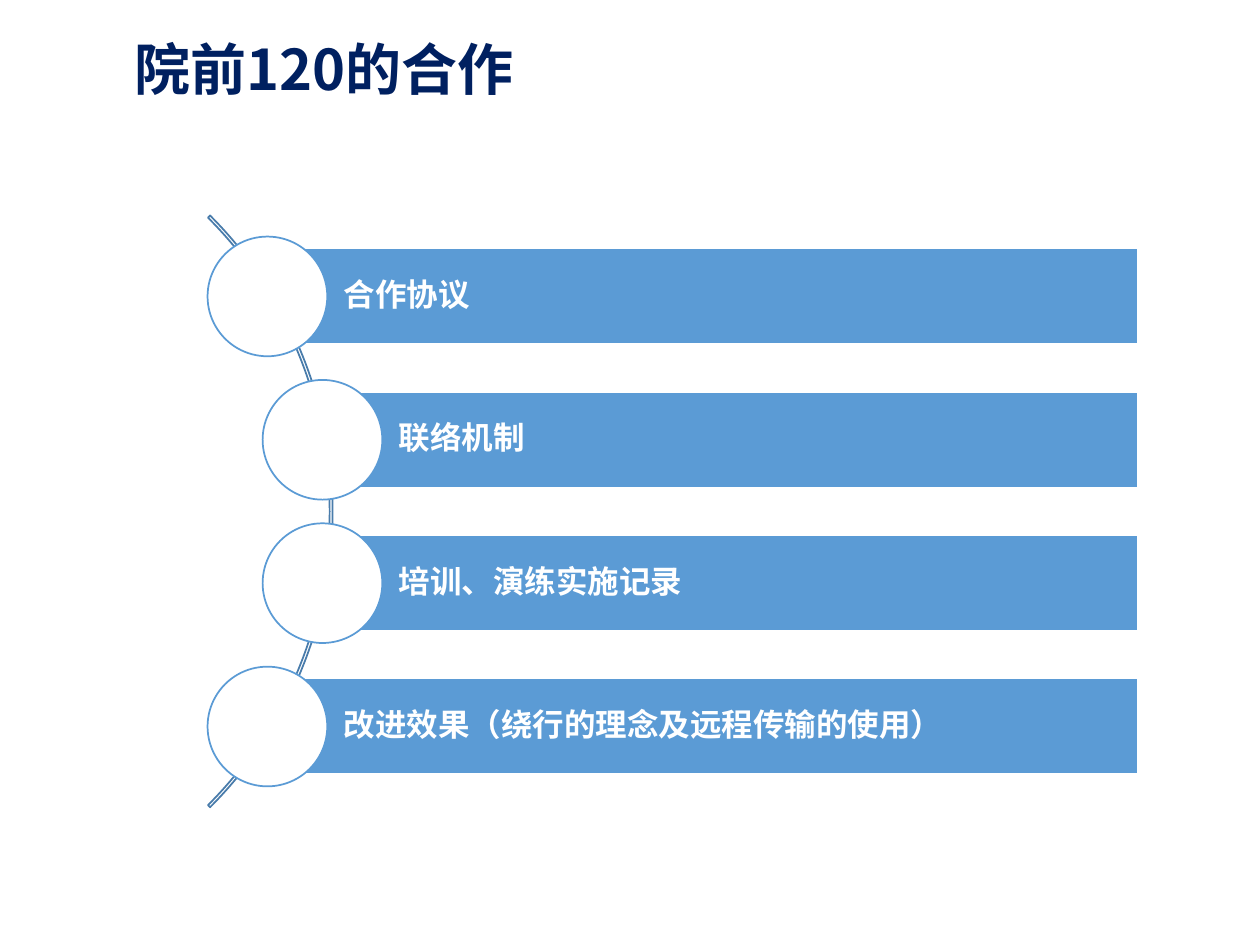
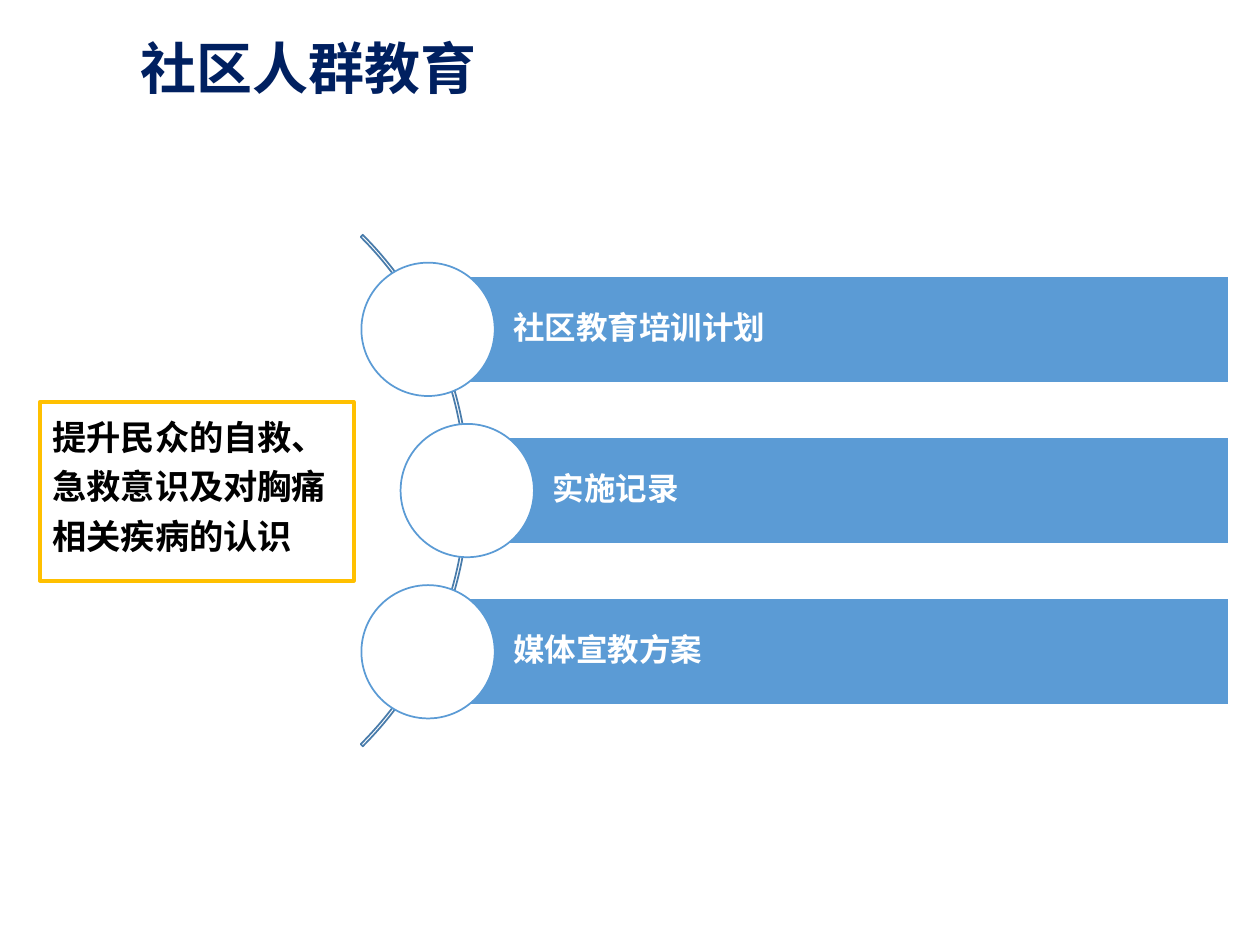
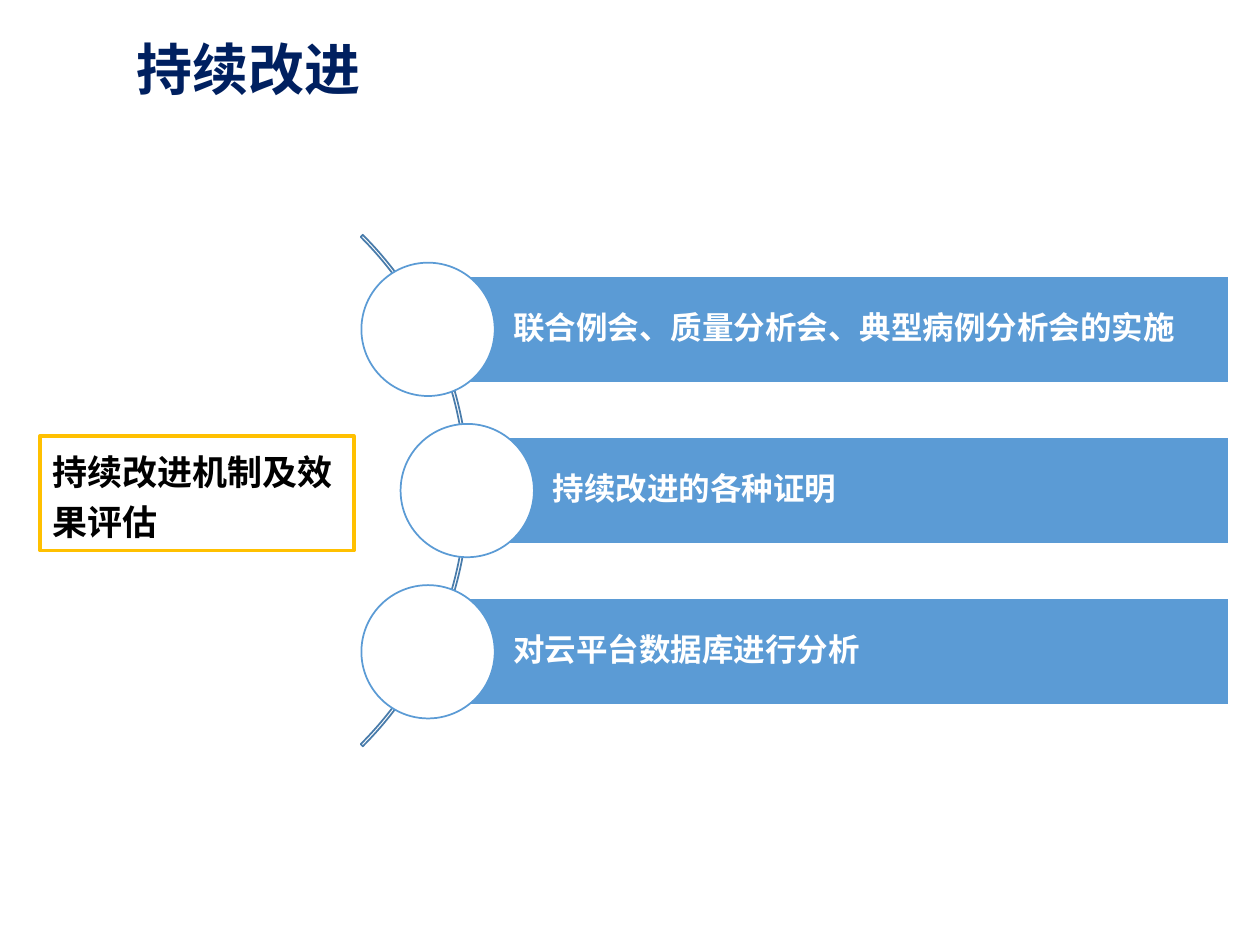
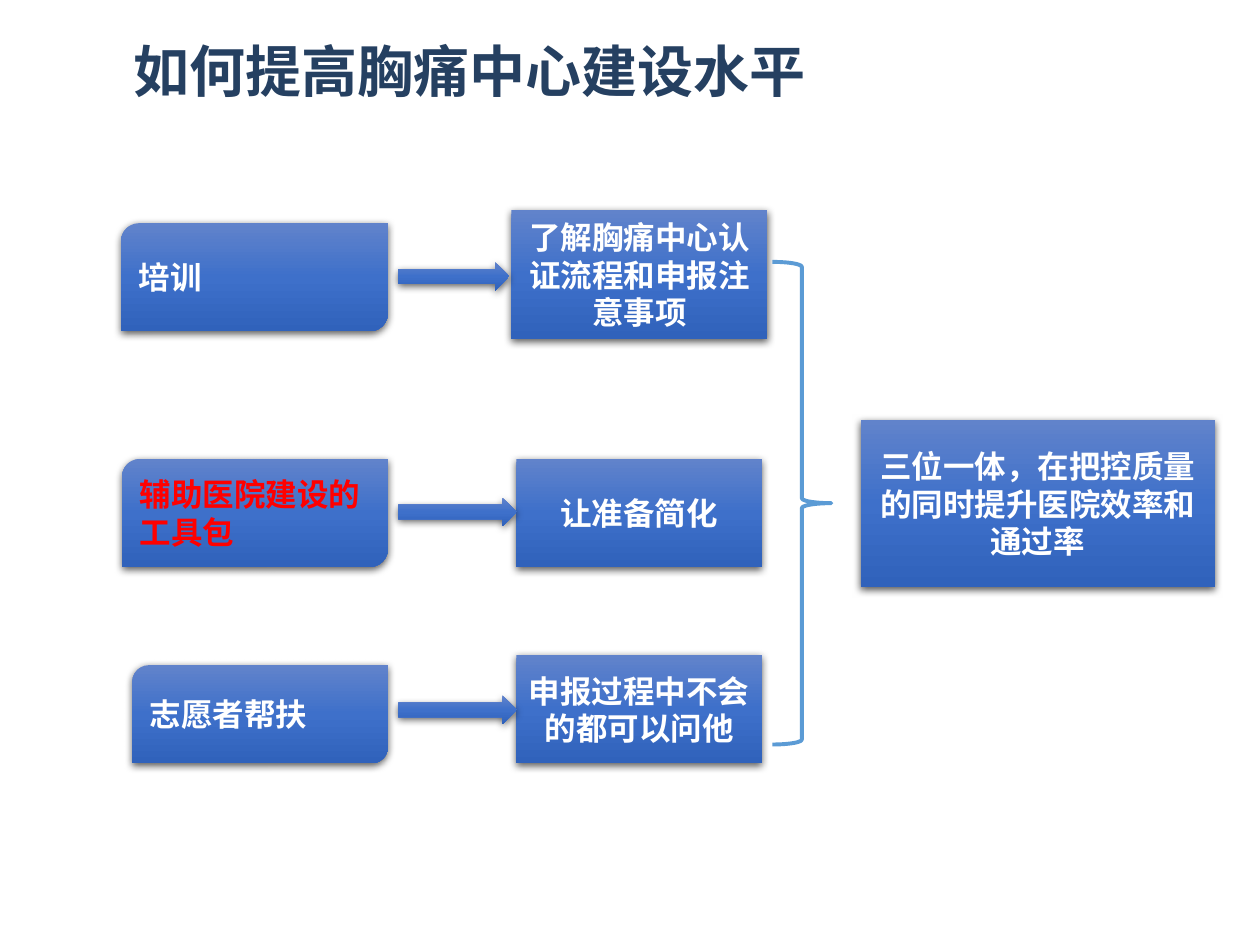
"""Build four slides on running a chest pain centre."""
from lxml import etree
from pptx import Presentation
from pptx.dml.color import RGBColor as RGB
from pptx.enum.shapes import MSO_SHAPE as SHAPE
from pptx.enum.text import MSO_ANCHOR as ANCHOR, PP_ALIGN as ALIGN
from pptx.oxml import parse_xml
from pptx.oxml.ns import nsdecls, qn
from pptx.util import Cm, Pt

COLORS = {
    "title": "002060", "title_soft": "254061", "bar": "5B9BD5", "arc": "497CAB",
    "white": "FFFFFF", "black": "000000", "gold": "FFC000", "red": "FF0000",
    "grad_top": "6183CB", "grad_mid": "3E70CA", "grad_end": "3062BB",
}
FONT = "Noto Sans CJK SC"
GRADIENT = f"""<a:gradFill {nsdecls("a")} rotWithShape="1"><a:gsLst>
<a:gs pos="0"><a:srgbClr val="{COLORS["grad_top"]}"/></a:gs>
<a:gs pos="50000"><a:srgbClr val="{COLORS["grad_mid"]}"/></a:gs>
<a:gs pos="100000"><a:srgbClr val="{COLORS["grad_end"]}"/></a:gs>
</a:gsLst><a:lin ang="5400000" scaled="0"/></a:gradFill>"""
SHADOW = f"""<a:effectLst {nsdecls("a")}>
<a:outerShdw blurRad="57150" dist="19050" dir="5400000" algn="ctr" rotWithShape="0">
<a:srgbClr val="{COLORS["black"]}"><a:alpha val="63000"/></a:srgbClr>
</a:outerShdw></a:effectLst>"""


def add_shape(s, kind, box, fill=None, line=None, width=1):
    """Add a preset shape at box (cm); the fill "gradient" also casts a shadow."""
    sp = s.shapes.add_shape(kind, *(Cm(v) for v in box))
    if fill == "gradient":
        sp._element.spPr.append(parse_xml(GRADIENT))
    elif fill:
        sp.fill.solid()
        sp.fill.fore_color.rgb = RGB.from_string(COLORS[fill])
    else:
        sp.fill.background()
    if line:
        sp.line.color.rgb = RGB.from_string(COLORS[line])
        sp.line.width = Pt(width)
    else:
        sp.line.fill.background()
    if fill == "gradient":
        sp._element.spPr.append(parse_xml(SHADOW))
    else:
        sp.shadow.inherit = False
    return sp


def add_text(sp, text, size, color, spacing=1.0, align=ALIGN.LEFT,
             anchor=ANCHOR.MIDDLE, latin=FONT):
    """Write one bold run into a shape."""
    tf = sp.text_frame
    tf.word_wrap = True
    tf.vertical_anchor = anchor
    p = tf.paragraphs[0]
    p.alignment = align
    p.line_spacing = spacing
    r = p.add_run()
    r.text = text
    r.font.size = Pt(size)
    r.font.bold = True
    r.font.color.rgb = RGB.from_string(COLORS[color])
    r.font.name = latin
    etree.SubElement(r._r.get_or_add_rPr(), qn("a:ea"), typeface=FONT)


prs = Presentation()
prs.slide_width, prs.slide_height = Cm(25.4), Cm(19.05)
blank = prs.slide_layouts[6]

wide = {"mid_y": 10.31, "pitch": 2.89, "bar_h": 1.93, "right": 22.94,
        "arc_x": -1.73, "arc_d": 16.87, "outer_x": 5.39, "inner_x": 6.5}
narrow = {"mid_y": 9.89, "pitch": 3.25, "bar_h": 2.15, "right": 24.78,
          "arc_x": 2.16, "arc_d": 14.58, "outer_x": 8.63, "inner_x": 9.42}

list_slides = [
    ("院前120的合作", (2.46, 0.71, 10.72, 1.5), wide, "Calibri", None,
     ["合作协议", "联络机制", "培训、演练实施记录", "改进效果（绕行的理念及远程传输的使用）"]),
    ("社区人群教育", (2.59, 0.68, 12.7, 1.5), narrow, FONT,
     ("提升民众的自救、急救意识及对胸痛相关疾病的认识", 19.6, 8.1, 3.61),
     ["社区教育培训计划", "实施记录", "媒体宣教方案"]),
    ("持续改进", (2.5, 0.71, 12.7, 1.5), narrow, FONT,
     ("持续改进机制及效果评估", 20, 8.79, 2.31),
     ["联合例会、质量分析会、典型病例分析会的实施", "持续改进的各种证明", "对云平台数据库进行分析"]),
]

for title, title_box, g, latin, note, items in list_slides:
    s = prs.slides.add_slide(blank)
    add_text(s.shapes.add_textbox(*(Cm(v) for v in title_box)), title, 32, "title", 0.9)
    if note:
        text, size, top, height = note
        sp = add_shape(s, SHAPE.RECTANGLE, (0.81, top, 6.32, height), "white", "gold", 2.25)
        add_text(sp, text, size, "black", 1.2, anchor=ANCHOR.TOP)

    arc_d, bar_h = g["arc_d"], g["bar_h"]
    arc = add_shape(s, SHAPE.BLOCK_ARC, (g["arc_x"] - arc_d / 2, g["mid_y"] - arc_d / 2,
                                         arc_d, arc_d), line="arc")
    arc.adjustments[0] = 189
    arc.adjustments[1] = 27
    arc.adjustments[2] = 0.06 / arc_d

    dot_d = bar_h * 1.25
    for i, item in enumerate(items):
        x = g["outer_x"] if i in (0, len(items) - 1) else g["inner_x"]
        y = g["mid_y"] + (i - (len(items) - 1) / 2) * g["pitch"]
        bar = add_shape(s, SHAPE.RECTANGLE, (x, y - bar_h / 2, g["right"] - x, bar_h),
                        "bar", "white")
        add_text(bar, item, 18, "white", 0.9, latin=latin)
        tf = bar.text_frame
        tf.margin_left = Cm(bar_h * 0.8)
        tf.margin_top = tf.margin_right = tf.margin_bottom = Cm(0.13)
        add_shape(s, SHAPE.OVAL, (x - dot_d / 2, y - dot_d / 2, dot_d, dot_d), "white", "bar")

s = prs.slides.add_slide(blank)
title_sp = s.shapes.add_textbox(Cm(2.44), Cm(0.61), Cm(19.89), Cm(1.62))
add_text(title_sp, "如何提高胸痛中心建设水平", 32, "title_soft", anchor=ANCHOR.TOP)

measures = [
    ("培训", "white", (2.44, 4.5, 5.38, 2.18),
     "了解胸痛中心认证流程和申报注意事项", SHAPE.RECTANGLE, (10.31, 4.24, 5.16, 2.59),
     (8.03, 5.28, 2.24, 0.58)),
    ("辅助医院建设的工具包", "red", (2.46, 9.25, 5.36, 2.18),
     "让准备简化", SHAPE.FLOWCHART_PROCESS, (10.41, 9.25, 4.95, 2.18),
     (8.03, 10.03, 2.39, 0.58)),
    ("志愿者帮扶", "white", (2.67, 13.41, 5.15, 1.98),
     "申报过程中不会的都可以问他", SHAPE.FLOWCHART_PROCESS, (10.41, 13.21, 4.95, 2.18),
     (8.03, 14.02, 2.39, 0.58)),
]
for measure, color, measure_box, effect, effect_kind, effect_box, arrow_box in measures:
    sp = add_shape(s, SHAPE.ROUND_2_DIAG_RECTANGLE, measure_box, "gradient")
    add_text(sp, measure, 18, color)
    sp = add_shape(s, effect_kind, effect_box, "gradient")
    add_text(sp, effect, 18, "white", align=ALIGN.CENTER)
    add_shape(s, SHAPE.RIGHT_ARROW, arrow_box, "gradient")

add_shape(s, SHAPE.RIGHT_BRACE, (15.57, 5.28, 1.19, 9.73), line="bar", width=2.25)
result = add_shape(s, SHAPE.FLOWCHART_PROCESS, (17.35, 8.46, 7.14, 3.38), "gradient")
add_text(result, "三位一体，在把控质量的同时提升医院效率和通过率", 18, "white", align=ALIGN.CENTER)

prs.save("out.pptx")
